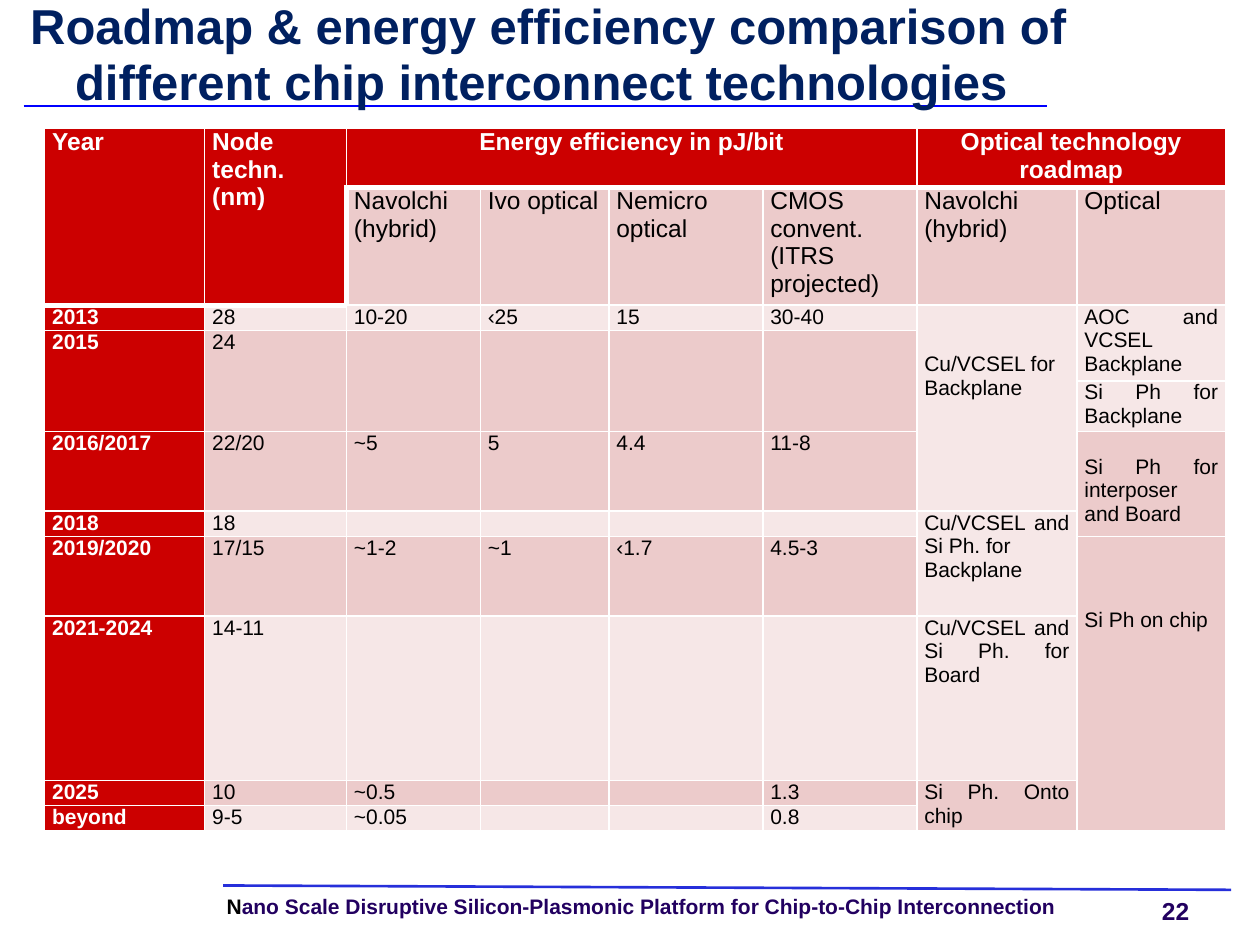
from lxml.etree import SubElement
from pptx import Presentation
from pptx.dml.color import RGBColor
from pptx.enum.shapes import MSO_CONNECTOR as Connector
from pptx.enum.text import MSO_ANCHOR as Anchor, PP_ALIGN as Align
from pptx.oxml.ns import qn
from pptx.util import Pt

WHITE = RGBColor(0xFF, 0xFF, 0xFF)
BLACK = RGBColor(0, 0, 0)
NAVY = RGBColor(0x00, 0x20, 0x60)
PURPLE = RGBColor(0x22, 0x00, 0x60)
TITLE_RULE = RGBColor(0x00, 0x00, 0xFF)
FOOTER_RULE = RGBColor(0x26, 0x2F, 0xDA)
RED = RGBColor(0xCC, 0x00, 0x00)
DARK_BAND = RGBColor(0xEC, 0xCB, 0xCB)
LIGHT_BAND = RGBColor(0xF6, 0xE7, 0xE7)

COLUMN_WIDTHS = [91.5, 81, 76.5, 73.5, 88, 88, 91.5, 85]
ROW_HEIGHTS = [33.5, 67, 14.5, 28.5, 27, 45.5, 14.5, 45.5, 94, 13.5, 13.5]
ROWS = [
    ["Year", "Node techn. (nm)", "Energy efficiency in pJ/bit", "", "", "",
     "Optical technology roadmap", ""],
    ["", "", "Navolchi (hybrid)", "Ivo optical", "Nemicro optical",
     "CMOS convent. (ITRS projected)", "Navolchi (hybrid)", "Optical"],
    ["2013", "28", "10-20", "‹25", "15", "30-40",
     "Cu/VCSEL for\nBackplane", "AOC and VCSEL Backplane"],
    ["2015", "24", "", "", "", "", "", ""],
    ["", "", "", "", "", "", "", "Si Ph for Backplane"],
    ["2016/2017", "22/20", "~5", "5", "4.4", "11-8", "",
     "Si Ph for interposer and Board"],
    ["2018", "18", "", "", "", "", "Cu/VCSEL and Si Ph. for\nBackplane", ""],
    ["2019/2020", "17/15", "~1-2", "~1", "‹1.7", "4.5-3", "", "Si Ph on chip"],
    ["2021-2024", "14-11", "", "", "", "", "Cu/VCSEL and Si Ph. for Board", ""],
    ["2025", "10", "~0.5", "", "", "1.3", "Si Ph. Onto chip", ""],
    ["beyond", "9-5", "~0.05", "", "", "0.8", "", ""],
]
MERGES = [
    ((0, 0), (1, 0)), ((0, 1), (1, 1)), ((0, 2), (0, 5)), ((0, 6), (0, 7)),
    *(((3, column), (4, column)) for column in range(6)),
    ((2, 6), (5, 6)), ((6, 6), (7, 6)), ((9, 6), (10, 6)),
    ((2, 7), (3, 7)), ((5, 7), (6, 7)), ((7, 7), (10, 7)),
]
TOP_MARGINS = {(2, 6): 27, (5, 7): 13.5, (7, 7): 41}


def style_span(span, size, color, bold=True):
    """Format one run."""
    font = span.font
    font.name, font.size, font.bold = "Arial", Pt(size), bold
    font.color.rgb = color


def add_text(page, bounds, pieces, size, wrap=True):
    """Add a one-paragraph text box from (text, colour) pieces."""
    box = page.shapes.add_textbox(*map(Pt, bounds))
    frame = box.text_frame
    frame.word_wrap = wrap
    frame.margin_left = frame.margin_right = 0
    frame.margin_top = frame.margin_bottom = 0
    para = frame.paragraphs[0]
    for text, color in pieces:
        span = para.add_run()
        span.text = text
        style_span(span, size, color)
    return frame


def add_rule(page, ends, color):
    """Draw a thin straight rule without a shadow."""
    rule = page.shapes.add_connector(Connector.STRAIGHT, *map(Pt, ends))
    rule.line.color.rgb = color
    rule.line.width = Pt(1.5)
    SubElement(rule._element.spPr, qn("a:effectLst"))


def set_borders(cell, row, column):
    """Give a cell white borders, thicker around the header."""
    header = row == 0 or (row == 1 and column < 2)
    below_header = (row == 1 and column > 1) or (row == 2 and column < 2)
    thick = {"L": (row, column) == (1, 2), "R": False,
             "T": below_header, "B": header}
    properties = cell._tc.get_or_add_tcPr()
    for side, is_thick in thick.items():
        line = SubElement(properties, qn(f"a:ln{side}"),
                          w=str(Pt(3 if is_thick else 1)))
        fill = SubElement(line, qn("a:solidFill"))
        SubElement(fill, qn("a:srgbClr"), val=str(WHITE))


def fill_cell(cell, row, column, text):
    """Write and format one table cell."""
    set_borders(cell, row, column)
    red = row == 0 or column == 0 or (row == 1 and column == 1)
    band = DARK_BAND if row % 2 else LIGHT_BAND
    cell.fill.solid()
    cell.fill.fore_color.rgb = RED if red else band
    cell.margin_left = cell.margin_right = Pt(4.3)
    cell.margin_top, cell.margin_bottom = Pt(TOP_MARGINS.get((row, column), 0)), 0
    cell.text_frame.text = text
    size = 14 if row < 2 and text else 12
    for para in cell.text_frame.paragraphs:
        centred = row == 0 and column > 1
        para.alignment = Align.CENTER if centred else Align.JUSTIFY
        for span in para.runs:
            style_span(span, size, WHITE if red else BLACK, red)
        para._p.get_or_add_endParaRPr().set("sz", str(size * 100))


def add_roadmap(page):
    """Add the technology roadmap table."""
    table = page.shapes.add_table(
        len(ROWS), len(COLUMN_WIDTHS), Pt(25.5), Pt(73.5),
        Pt(sum(COLUMN_WIDTHS)), Pt(sum(ROW_HEIGHTS))).table
    for column, width in zip(table.columns, COLUMN_WIDTHS):
        column.width = Pt(width)
    for row, height in zip(table.rows, ROW_HEIGHTS):
        row.height = Pt(height)
    for row, texts in enumerate(ROWS):
        for column, text in enumerate(texts):
            fill_cell(table.cell(row, column), row, column, text)
    for first, last in MERGES:
        table.cell(*first).merge(table.cell(*last))


def main():
    """Build the roadmap slide."""
    deck = Presentation()
    deck.slide_width, deck.slide_height = Pt(720), Pt(540)
    page = deck.slides.add_slide(deck.slide_layouts[6])
    footer = add_text(page, (129.5, 512, 514, 13), [
        ("N", BLACK),
        ("ano Scale Disruptive Silicon-Plasmonic Platform for "
         "Chip-to-Chip Interconnection", PURPLE)], 12)
    footer.paragraphs[0].line_spacing = 0.9
    add_text(page, (664, 512, 17, 16.5), [("22", PURPLE)], 14, wrap=False)
    add_rule(page, (127.5, 506, 703.5, 508.5), FOOTER_RULE)
    add_rule(page, (13.5, 60.5, 598.5, 60.5), TITLE_RULE)
    title = add_text(page, (0, 0, 626.5, 62.5), [
        ("Roadmap & energy efficiency comparison of different chip "
         "interconnect technologies ", NAVY)], 28)
    title.vertical_anchor = Anchor.MIDDLE
    title.paragraphs[0].alignment = Align.CENTER
    title.paragraphs[0].line_spacing = Pt(32)
    add_roadmap(page)
    deck.save("out.pptx")


if __name__ == "__main__":
    main()
